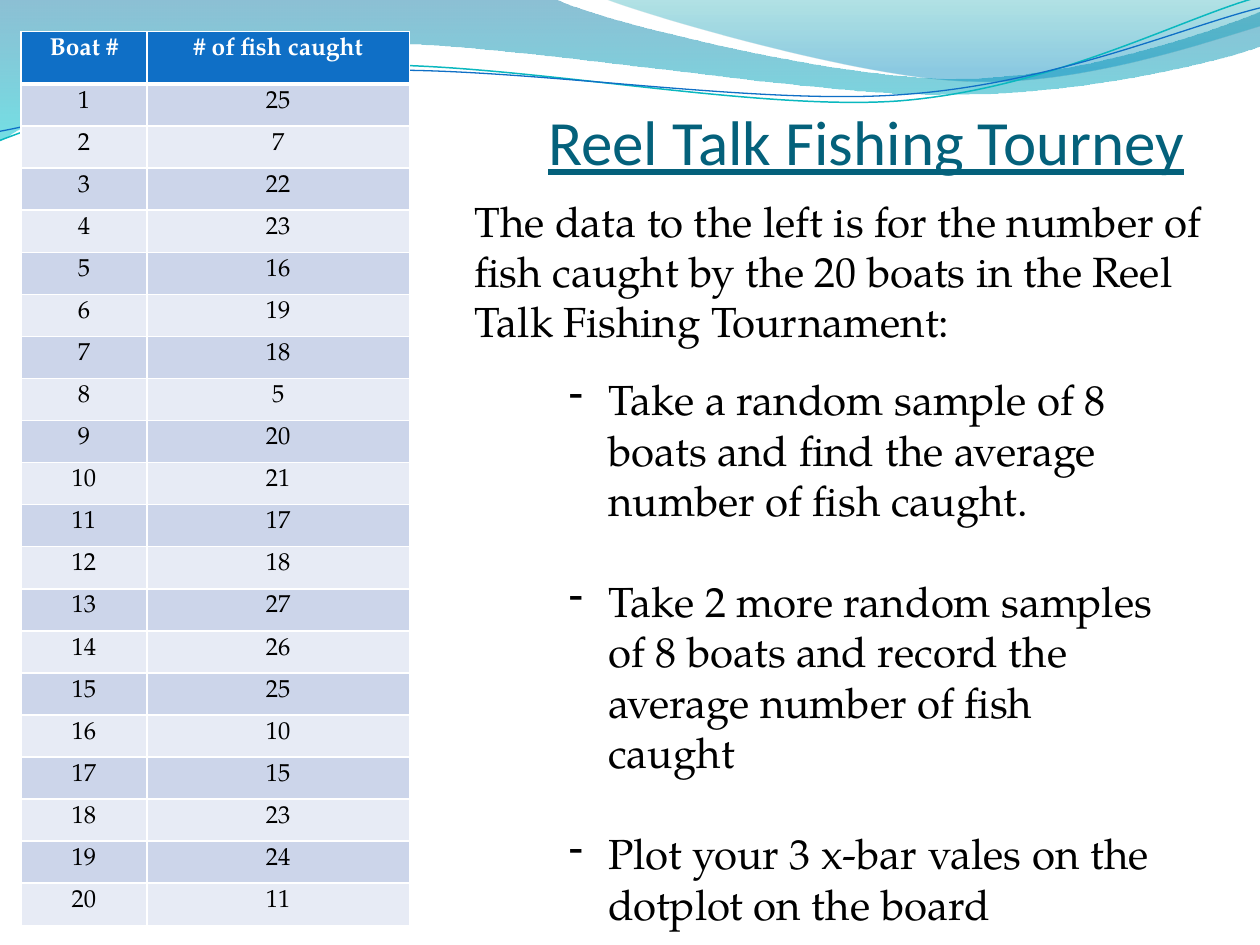
from collections import namedtuple

from lxml import etree
from pptx import Presentation, util as u
from pptx.dml.color import RGBColor
from pptx.enum import text
from pptx.oxml import ns

PX = 9525  # EMU per px, 96 px to the inch
Box = namedtuple("Box", "left top width height")

THEME = {
    "title": {"name": "Calibri", "size": 36, "color": "04617B", "underline": True},
    "body": {"name": "TeX Gyre Pagella", "size": 24, "color": "000000"},
    "header": {"name": "TeX Gyre Pagella", "size": 14, "color": "FFFFFF", "bold": True},
    "cell": {"name": "TeX Gyre Pagella", "size": 14, "color": "000000", "bold": False},
    "header_fill": "0F6FC6",
    "bands": ("CCD5EA", "E7EBF5"),
    "border": "FFFFFF",
}

# Each step holds one point for a straight line or three for a curve.
RIBBONS = [
    {"start": (0, 0),
     "steps": [[(422, -1)],
               [(457, 16), (637, 60), (728, 60)],
               [(819, 60), (920, 25), (960, 9)],
               [(961, 35)],
               [(944, 42), (835, 73), (716, 72)],
               [(596, 72), (367, 27), (247, 33)],
               [(124, 35), (44, 80), (-1, 108)]],
     "stops": [(0, "0074A1", 45), (1, "00C6CF", 55)]},
    {"start": (460, -1),
     "steps": [[(489, 11), (655, 60), (738, 62)],
               [(822, 66), (923, 31), (960, 20)],
               [(960, 0)]],
     "stops": [(0, "00A1A9", 30), (0.8, "008BBF", 45)]},
]
STRANDS = [
    {"start": (0, 107),
     "steps": [[(46, 89), (152, 55), (266, 50)],
               [(379, 45), (569, 85), (684, 77)],
               [(800, 68), (900, 14), (958, -2)]],
     "color": "0AB8BF", "width": 0.85},
    {"start": (0, 100),
     "steps": [[(45, 92), (157, 59), (272, 54)],
               [(387, 49), (573, 81), (688, 72)],
               [(803, 64), (903, 20), (960, 6)]],
     "color": "0F6FC6", "width": 0.75},
]

FISH_CAUGHT = [25, 7, 22, 23, 16, 19, 18, 5, 20, 21,
               17, 18, 27, 26, 25, 10, 15, 23, 24, 11]
INTRO = ("The data to the left is for the number of fish caught by the 20 boats "
         "in the Reel Talk Fishing Tournament:")
TASKS = [
    "Take a random sample of 8 boats and find the average number of fish caught.",
    "Take 2 more random samples of 8 boats and record the average number of fish caught",
    "Plot your 3 x-bar vales on the dotplot on the board",
]


def emu(box):
    return [value * PX for value in box]


def set_all(target, values):
    for name, value in values.items():
        setattr(target, name, value)


def write(paragraph, words, style, **layout):
    run = paragraph.add_run()
    run.text = words
    values = dict(style, size=u.Pt(style["size"]))
    run.font.color.rgb = RGBColor.from_string(values.pop("color"))
    set_all(run.font, values)
    set_all(paragraph, layout)


def add_curve(slide, box, start, steps, close):
    """Lay the points as straight lines, then join each triple into a Bézier curve."""
    def place(point):
        return box.left + point[0], box.top + point[1]

    builder = slide.shapes.build_freeform(*place(start), scale=PX)
    builder.add_line_segments([place(p) for step in steps for p in step], close=close)
    shape = builder.convert_to_shape()
    shape.shadow.inherit = False
    lines = iter(list(shape._element.iter(ns.qn("a:lnTo"))))
    for step in steps:
        segment = [next(lines) for _ in step]
        if len(step) == 3:
            curve = etree.Element(ns.qn("a:cubicBezTo"))
            segment[0].addprevious(curve)
            for line in segment:
                curve.append(line[0])
                line.getparent().remove(line)
    return shape


def add_ribbon(slide, box, ribbon):
    shape = add_curve(slide, box, ribbon["start"], ribbon["steps"], close=True)
    shape.line.fill.background()
    shape.fill.gradient()
    shape.fill.gradient_angle = 270
    for stop, (position, color, opacity) in zip(shape.fill.gradient_stops, ribbon["stops"]):
        stop.position = position
        stop.color.rgb = RGBColor.from_string(color)
    gradient = shape._element.spPr.find(ns.qn("a:gradFill"))
    for color, (_, _, opacity) in zip(gradient.iter(ns.qn("a:srgbClr")), ribbon["stops"]):
        etree.SubElement(color, ns.qn("a:alpha"), val=str(opacity * 1000))


def add_wave(slide, box):
    for ribbon in RIBBONS:
        add_ribbon(slide, box, ribbon)
    for strand in STRANDS:
        shape = add_curve(slide, box, strand["start"], strand["steps"], close=False)
        shape.fill.background()
        shape.line.color.rgb = RGBColor.from_string(strand["color"])
        shape.line.width = u.Pt(strand["width"])


def add_text_frame(slide, box, **layout):
    frame = slide.shapes.add_textbox(*emu(box)).text_frame
    set_all(frame, dict(layout, word_wrap=True))
    return frame


def add_title(slide, box):
    frame = add_text_frame(slide, box, vertical_anchor=text.MSO_ANCHOR.BOTTOM,
                           margin_left=0, margin_right=0, margin_bottom=0)
    write(frame.paragraphs[0], "Reel Talk Fishing Tourney", THEME["title"],
          alignment=text.PP_ALIGN.CENTER)


def add_intro(slide, box):
    frame = add_text_frame(slide, box)
    write(frame.paragraphs[0], INTRO, THEME["body"], space_before=u.Pt(5))


def add_tasks(slide, box):
    frame = add_text_frame(slide, box)
    indent = 30 * PX
    for index, task in enumerate(TASKS):
        paragraph = frame.add_paragraph() if index else frame.paragraphs[0]
        write(paragraph, task, THEME["body"], space_before=u.Pt(29 if index else 0))
        properties = paragraph._p.get_or_add_pPr()
        properties.set("marL", str(indent))
        properties.set("indent", str(-indent))
        etree.SubElement(properties, ns.qn("a:buChar"), char="-")


def add_borders(cell, bottom_width):
    properties = cell._tc.get_or_add_tcPr()
    widths = {"lnL": 1, "lnR": 1, "lnT": 1, "lnB": bottom_width}
    for position, (side, width) in enumerate(widths.items()):
        line = etree.Element(ns.qn(f"a:{side}"), w=str(u.Pt(width)))
        fill = etree.SubElement(line, ns.qn("a:solidFill"))
        etree.SubElement(fill, ns.qn("a:srgbClr"), val=THEME["border"])
        properties.insert(position, line)


def add_catch_table(slide, box):
    rows = [("Boat #", "# of fish caught"), *enumerate(FISH_CAUGHT, 1)]
    header_height, first_width = 40, 96
    row_height = (box.height - header_height) // len(FISH_CAUGHT)
    table = slide.shapes.add_table(len(rows), 2, *emu(box)).table
    for column, width in zip(table.columns, (first_width, box.width - first_width)):
        column.width = width * PX
    for index, values in enumerate(rows):
        header = index == 0
        table.rows[index].height = (header_height if header else row_height) * PX
        color = THEME["header_fill"] if header else THEME["bands"][(index - 1) % 2]
        for column, value in enumerate(values):
            cell = table.cell(index, column)
            cell.fill.solid()
            cell.fill.fore_color.rgb = RGBColor.from_string(color)
            add_borders(cell, 3 if header else 1)
            write(cell.text_frame.paragraphs[0], str(value),
                  THEME["header" if header else "cell"],
                  alignment=text.PP_ALIGN.CENTER)


def main():
    presentation = Presentation()
    presentation.slide_width, presentation.slide_height = 960 * PX, 720 * PX
    slide = presentation.slides.add_slide(presentation.slide_layouts[6])
    add_wave(slide, Box(0, 0, 960, 108))
    add_title(slide, Box(400, 56, 520, 80))
    add_intro(slide, Box(352, 144, 592, 104))
    add_tasks(slide, Box(424, 280, 464, 397))
    add_catch_table(slide, Box(16, 24, 296, 680))
    presentation.save("out.pptx")


if __name__ == "__main__":
    main()
